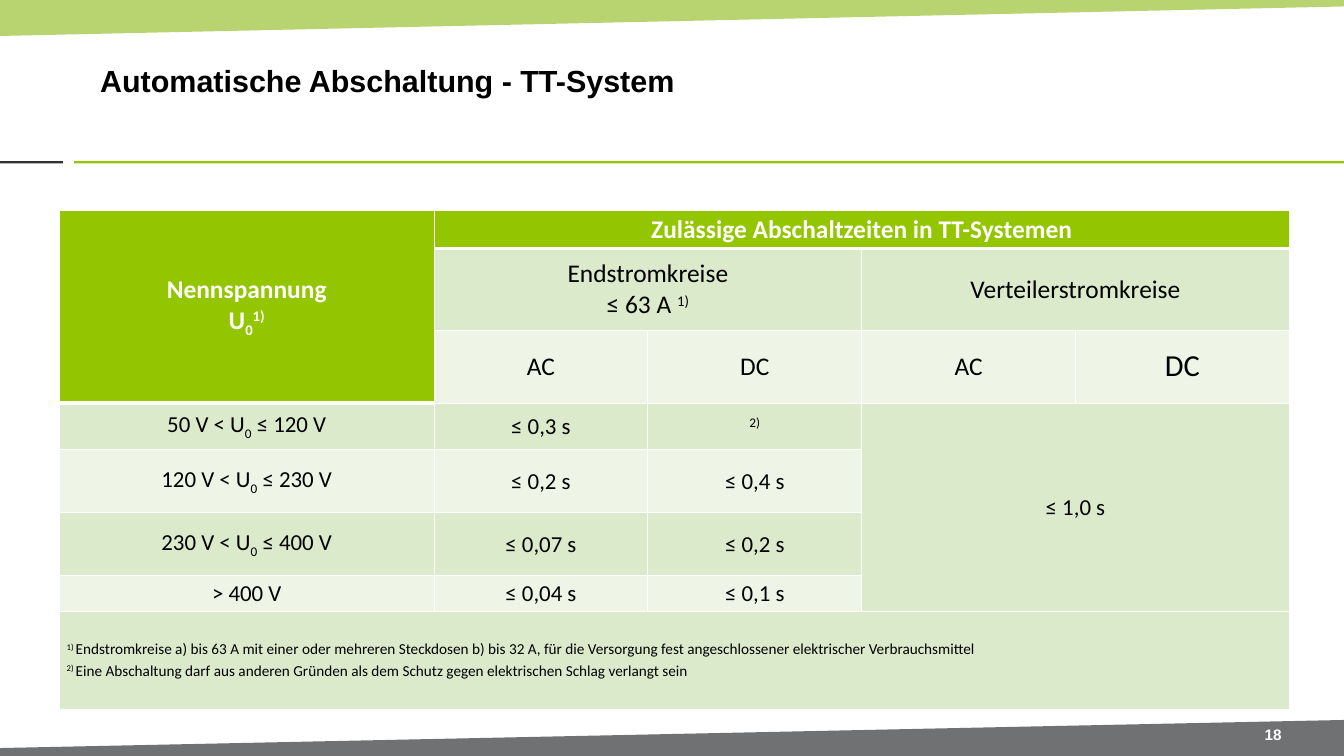
from dataclasses import dataclass

from lxml import etree
from pptx import Presentation
from pptx import util as u
from pptx.dml.color import RGBColor
from pptx.enum import shapes, text
from pptx.oxml.ns import qn


@dataclass(frozen=True)
class Theme:
    heading_font: str = "Arial"
    table_font: str = "Calibri"
    green: str = "94C600"
    banner: str = "95C02A"
    grey: str = "707173"
    dark: str = "313130"
    band_odd: str = "DCEACC"
    band_even: str = "EEF5E7"
    black: str = "000000"
    white: str = "FFFFFF"
    title_size: int = 24
    large_size: int = 24
    header_size: int = 20
    body_size: int = 18
    note_size: int = 12


WIDTH, HEIGHT = 37.34, 21.0
COLUMN_WIDTHS = [10.41] + [5.94] * 4
ROW_HEIGHTS = [1.07, 2.26, 2.03, 1.3, 1.75, 1.75, 0.99, 2.72]
HEADER_ROWS = 3
NOTE_ROW = 7

# first cell and last cell of each merged area
MERGES = [
    ((0, 0), (2, 0)), ((0, 1), (0, 4)), ((1, 1), (1, 2)),
    ((1, 3), (1, 4)), ((3, 3), (6, 4)), ((7, 0), (7, 4)),
]


def sub(content):
    return content, -25000


def sup(content):
    return content, 30000


def voltage_range(low, high):
    return [[f"{low} V < U", sub("0"), f" ≤ {high} V"]]


# each cell holds paragraphs, each paragraph holds runs
CELLS = {
    (0, 0): [["Nennspannung"], ["U", sub("0"), sup("1)")]],
    (0, 1): [["Zulässige Abschaltzeiten in TT-Systemen"]],
    (1, 1): [["Endstromkreise"], ["≤ 63 A ", sup("1)")]],
    (1, 3): [["Verteilerstromkreise"]],
    (2, 1): [["AC"]],
    (2, 2): [["DC"]],
    (2, 3): [["AC"]],
    (2, 4): [["DC"]],
    (3, 0): voltage_range(50, 120),
    (3, 1): [["≤ 0,3 s"]],
    (3, 2): [[sup("2)")]],
    (3, 3): [["≤ 1,0 s"]],
    (4, 0): voltage_range(120, 230),
    (4, 1): [["≤ 0,2 s"]],
    (4, 2): [["≤ 0,4 s"]],
    (5, 0): voltage_range(230, 400),
    (5, 1): [["≤ 0,07 s"]],
    (5, 2): [["≤ 0,2 s"]],
    (6, 0): [["> 400 V"]],
    (6, 1): [["≤ 0,04 s"]],
    (6, 2): [["≤ 0,1 s"]],
    (7, 0): [
        [sup("1) "), "Endstromkreise a) bis 63 A mit einer oder mehreren Steckdosen "
         "b) bis 32 A, für die Versorgung fest angeschlossener elektrischer "
         "Verbrauchsmittel"],
        [sup("2) "), "Eine Abschaltung darf aus anderen Gründen als dem Schutz gegen "
         "elektrischen Schlag verlangt sein"],
    ],
}


class SlideBuilder:
    def __init__(self, slide, theme):
        self.slide = slide
        self.theme = theme

    def paint(self, shape, color):
        shape.shadow.inherit = False
        shape.fill.solid()
        shape.fill.fore_color.rgb = RGBColor.from_string(color)
        shape.line.fill.background()

    def bar(self, left, top, width, height, color):
        shape = self.slide.shapes.add_shape(
            shapes.MSO_SHAPE.RECTANGLE, u.Cm(left), u.Cm(top), u.Cm(width), u.Cm(height))
        self.paint(shape, color)

    def polygon(self, points, color, opacity=100):
        corners = [(u.Cm(x), u.Cm(y)) for x, y in points]
        builder = self.slide.shapes.build_freeform(*corners[0])
        builder.add_line_segments(corners[1:], close=True)
        shape = builder.convert_to_shape()
        self.paint(shape, color)
        if opacity < 100:
            fill_color = shape._element.spPr.find(f"{qn('a:solidFill')}/{qn('a:srgbClr')}")
            etree.SubElement(fill_color, qn("a:alpha"), val=str(opacity * 1000))

    def add_runs(self, paragraph, runs, font, size, color, bold=False,
                 align=text.PP_ALIGN.CENTER):
        paragraph.alignment = align
        for item in runs:
            content, baseline = item if isinstance(item, tuple) else (item, 0)
            run = paragraph.add_run()
            run.text = content
            run.font.name = font
            run.font.size = u.Pt(size)
            run.font.bold = bold
            run.font.color.rgb = RGBColor.from_string(color)
            if baseline:
                run.font._element.set("baseline", str(baseline))

    def frame(self, text_frame):
        text_frame.word_wrap = True
        text_frame.auto_size = text.MSO_AUTO_SIZE.NONE
        text_frame.vertical_anchor = text.MSO_ANCHOR.MIDDLE
        text_frame.margin_left = text_frame.margin_right = u.Cm(0.28)
        text_frame.margin_top = text_frame.margin_bottom = u.Cm(0.15)
        return text_frame.paragraphs[0]

    def title(self, content, left, top, width, height):
        shape = self.slide.shapes.title
        shape.left, shape.top = u.Cm(left), u.Cm(top)
        shape.width, shape.height = u.Cm(width), u.Cm(height)
        self.add_runs(self.frame(shape.text_frame), [content], self.theme.heading_font,
                      self.theme.title_size, self.theme.black, True, text.PP_ALIGN.LEFT)

    def page_number(self, content, left, top, width, height):
        box = self.slide.shapes.add_textbox(
            u.Cm(left), u.Cm(top), u.Cm(width), u.Cm(height))
        self.add_runs(self.frame(box.text_frame), [content], self.theme.heading_font,
                      self.theme.note_size, self.theme.white, True)

    def table(self, left, top):
        table = self.slide.shapes.add_table(
            len(ROW_HEIGHTS), len(COLUMN_WIDTHS), u.Cm(left), u.Cm(top),
            u.Cm(sum(COLUMN_WIDTHS)), u.Cm(sum(ROW_HEIGHTS))).table
        table.first_row = table.horz_banding = False
        for column, width in zip(table.columns, COLUMN_WIDTHS):
            column.width = u.Cm(width)
        for row, height in zip(table.rows, ROW_HEIGHTS):
            row.height = u.Cm(height)
        for first, last in MERGES:
            table.cell(*first).merge(table.cell(*last))
        for row in range(len(ROW_HEIGHTS)):
            for column in range(len(COLUMN_WIDTHS)):
                self.cell(table.cell(row, column), row, column)

    def cell(self, cell, row, column):
        theme = self.theme
        header = row == 0 or (column == 0 and row < HEADER_ROWS)
        self.borders(cell, row, column)
        band = theme.band_odd if row % 2 else theme.band_even
        cell.fill.solid()
        cell.fill.fore_color.rgb = RGBColor.from_string(theme.green if header else band)
        cell.vertical_anchor = text.MSO_ANCHOR.MIDDLE
        cell.margin_left = cell.margin_right = u.Cm(0.2)
        cell.margin_top = cell.margin_bottom = u.Cm(0.1)

        size = theme.header_size if row < HEADER_ROWS else theme.body_size
        align = text.PP_ALIGN.CENTER
        if row == NOTE_ROW:
            size, align = theme.note_size, text.PP_ALIGN.LEFT
        elif (row, column) == (2, 4):
            size = theme.large_size
        color = theme.white if header else theme.black
        for index, runs in enumerate(CELLS.get((row, column), [])):
            frame = cell.text_frame
            paragraph = frame.add_paragraph() if index else frame.paragraphs[0]
            if index and row == NOTE_ROW:
                paragraph.space_before = u.Pt(2.4)
            self.add_runs(paragraph, runs, theme.table_font, size, color, header, align)

    def borders(self, cell, row, column):
        """White grid, with a heavier line below the green header cells."""
        def below(index):
            return 3 if index == 0 or (index, column) == (2, 0) else 1

        properties = cell._tc.get_or_add_tcPr()
        widths = {"lnL": 1, "lnR": 1, "lnT": below(row - 1), "lnB": below(row)}
        for side, width in widths.items():
            line = etree.SubElement(properties, qn(f"a:{side}"), w=str(int(u.Pt(width))))
            fill = etree.SubElement(line, qn("a:solidFill"))
            etree.SubElement(fill, qn("a:srgbClr"), val=self.theme.white)


def main():
    presentation = Presentation()
    presentation.slide_width, presentation.slide_height = u.Cm(WIDTH), u.Cm(HEIGHT)
    theme = Theme()
    slide = presentation.slides.add_slide(presentation.slide_layouts[5])
    builder = SlideBuilder(slide, theme)
    builder.polygon([(0, 0), (WIDTH, 0), (WIDTH, 0.18), (0, 1)], theme.banner, 67)
    builder.bar(0, 4.48, 1.75, 0.06, theme.dark)
    builder.bar(2.06, 4.48, WIDTH - 2.06, 0.06, theme.green)
    builder.polygon([(WIDTH, HEIGHT), (0, HEIGHT), (0, 20.78), (WIDTH, 20)], theme.grey)
    builder.title("Automatische Abschaltung - TT-System", 2.5, 0.72, 29.3, 3.02)
    builder.page_number("18", 34.27, 20.04, 2.2, 0.74)
    builder.table(1.65, 5.84)
    presentation.save("out.pptx")


if __name__ == "__main__":
    main()
